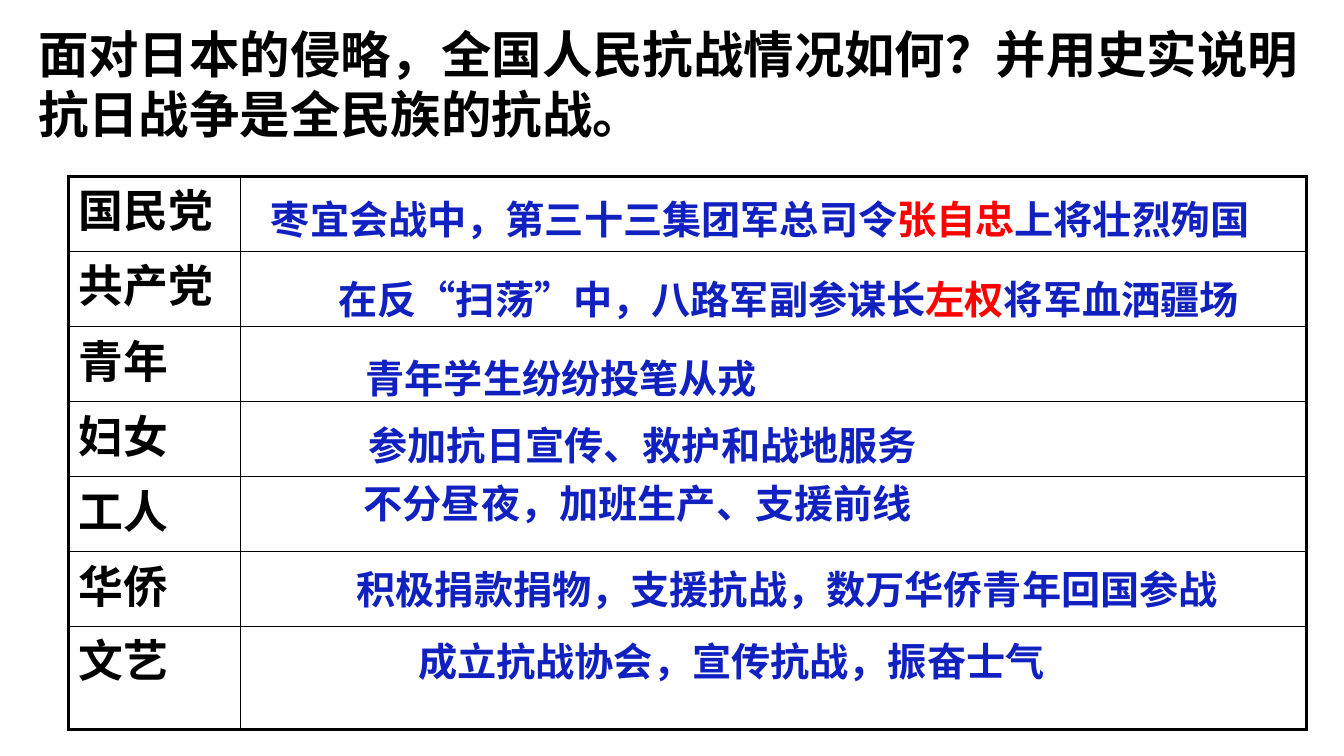
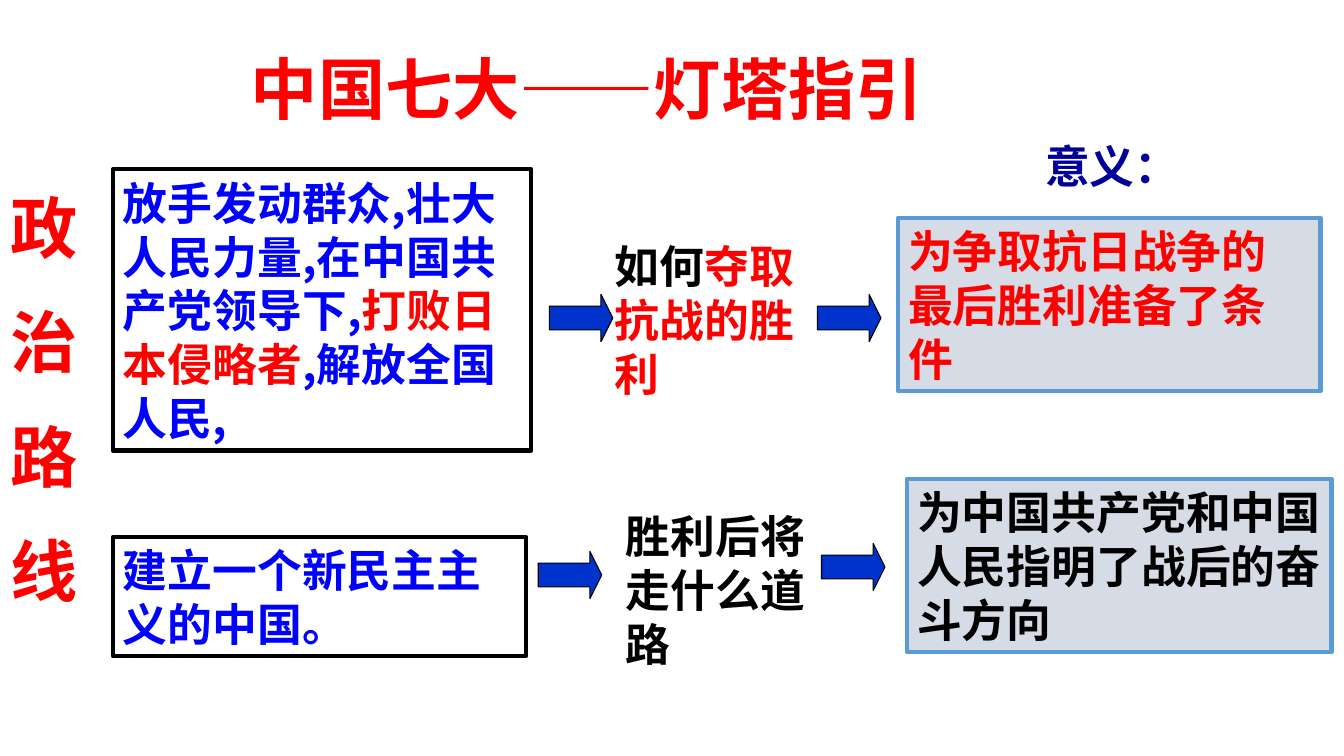
import pptx
import pptx.dml.color
import pptx.enum.shapes
import pptx.enum.text
import pptx.oxml
import pptx.oxml.ns
import pptx.util

CELL = 0.1
COLUMNS, ROWS = 133.33, 75
FONT = "Noto Sans CJK SC"
BLACK, RED, BLUE, NAVY = "000000", "FF0000", "0000FF", "000099"
FACT_BLUE, ARROW_BLUE = "1121BF", "0033CC"
PANEL_FILL, PANEL_LINE = "D6DCE5", "5B9BD5"
THICK, THIN = 2.25, 1
TOP = pptx.enum.text.MSO_ANCHOR.TOP
MIDDLE = pptx.enum.text.MSO_ANCHOR.MIDDLE
SHAPES = pptx.enum.shapes.MSO_SHAPE


def grid(*cells):
    return [pptx.util.Inches(cell * CELL) for cell in cells]


def color(hex_text):
    return pptx.dml.color.RGBColor.from_string(hex_text)


def style_run(run, size, ink, font):
    run.font.size = pptx.util.Pt(size)
    run.font.bold = True
    run.font.color.rgb = color(ink)
    run.font.name = font
    east_asian = pptx.oxml.parse_xml(
        f'<a:ea {pptx.oxml.ns.nsdecls("a")} typeface="{FONT}"/>')
    run.font._element.append(east_asian)


def write(frame, paragraphs, size, font=FONT, spacing=1.2, gap=0,
          align=pptx.enum.text.PP_ALIGN.LEFT):
    for index, parts in enumerate(paragraphs):
        paragraph = frame.paragraphs[0] if index == 0 else frame.add_paragraph()
        paragraph.alignment = align
        paragraph.line_spacing = pptx.util.Pt(size * spacing)
        if index:
            paragraph.space_before = pptx.util.Pt(gap)
        for words, ink in parts:
            run = paragraph.add_run()
            run.text = words
            style_run(run, size, ink, font)


def add_label(slide, place, paragraphs, size, anchor=TOP, **options):
    frame = slide.shapes.add_textbox(*grid(*place)).text_frame
    frame.word_wrap = True
    frame.vertical_anchor = anchor
    write(frame, paragraphs, size, **options)


def add_panel(slide, place, parts, outline, fill=None):
    panel = slide.shapes.add_shape(SHAPES.RECTANGLE, *grid(*place))
    panel.shadow.inherit = False
    panel.line.color.rgb = color(outline)
    panel.line.width = pptx.util.Pt(3)
    if fill:
        panel.fill.solid()
        panel.fill.fore_color.rgb = color(fill)
    else:
        panel.fill.background()
    panel.text_frame.word_wrap = True
    panel.text_frame.vertical_anchor = MIDDLE
    write(panel.text_frame, [parts], 32)


def add_arrow(slide, left, top):
    arrow = slide.shapes.add_shape(SHAPES.RIGHT_ARROW, *grid(left, top, 6.3, 4.7))
    arrow.shadow.inherit = False
    arrow.adjustments[0] = 0.5
    arrow.adjustments[1] = 0.25
    arrow.fill.solid()
    arrow.fill.fore_color.rgb = color(ARROW_BLUE)
    arrow.line.color.rgb = color(BLACK)
    arrow.line.width = pptx.util.Pt(0.75)


def set_borders(cell, **widths):
    properties = cell._tc.get_or_add_tcPr()
    for side in "LRTB":
        properties.append(pptx.oxml.parse_xml(
            f'<a:ln{side} {pptx.oxml.ns.nsdecls("a")} w="{pptx.util.Pt(widths[side])}">'
            f'<a:solidFill><a:srgbClr val="{BLACK}"/></a:solidFill></a:ln{side}>'))


def add_groups_table(slide, left, top, widths, heights, groups):
    table = slide.shapes.add_table(
        len(heights), len(widths),
        *grid(left, top, sum(widths), sum(heights))).table
    table.first_row = table.horz_banding = False
    for column, width in zip(table.columns, grid(*widths)):
        column.width = width
    for row, height in zip(table.rows, grid(*heights)):
        row.height = height
    last_row, last_column = len(heights) - 1, len(widths) - 1
    for r, group in enumerate(groups):
        for c in range(len(widths)):
            cell = table.cell(r, c)
            set_borders(cell,
                        L=THICK if c == 0 else THIN,
                        R=THICK if c == last_column else THIN,
                        T=THICK if r == 0 else THIN,
                        B=THICK if r == last_row else THIN)
            cell.fill.background()
        name_cell = table.cell(r, 0)
        name_cell.vertical_anchor = TOP if r == last_row else MIDDLE
        if r == last_row:
            name_cell.margin_top = pptx.util.Inches(0.1)
        write(name_cell.text_frame, [[(group, BLACK)]], 32)


def build_resistance(slide):
    left, widths = 6.8, (17.1, 105.7)
    groups = ["国民党", "共产党", "青年", "妇女", "工人", "华侨", "文艺"]
    add_groups_table(slide, left, 17.5, widths, [7.45] * 6 + [10.2], groups)
    facts = [
        (25.9, 18.9, [("枣宜会战中，第三十三集团军总司令", FACT_BLUE),
                      ("张自忠", RED), ("上将壮烈殉国", FACT_BLUE)]),
        (32.6, 26.8, [("在反“扫荡”中，八路军副参谋长", FACT_BLUE),
                      ("左权", RED), ("将军血洒疆场", FACT_BLUE)]),
        (35.3, 34.6, [("青年学生纷纷投笔从戎", FACT_BLUE)]),
        (35.6, 41.3, [("参加抗日宣传、救护和战地服务", FACT_BLUE)]),
        (35.1, 47, [("不分昼夜，加班生产、支援前线", FACT_BLUE)]),
        (34.4, 55.6, [("积极捐款捐物，支援抗战，数万华侨青年回国参战", FACT_BLUE)]),
        (40.5, 62.7, [("成立抗战协会，宣传抗战，振奋士气", FACT_BLUE)]),
    ]
    table_right = left + sum(widths)
    for fact_left, top, parts in facts:
        add_label(slide, (fact_left, top, table_right - fact_left, 5.7),
                  [parts], 28, MIDDLE)
    question = "面对日本的侵略，全国人民抗战情况如何？并用史实说明抗日战争是全民族的抗战。"
    add_label(slide, (2.8, 1.8, 130.9, 13.1), [[(question, BLACK)]], 36)


def build_congress(slide):
    add_label(slide, (23.9, 0.2, 90.1, 13.1),
              [[("中国七大——灯塔指引", RED)]], 48, spacing=1.8)
    add_label(slide, (0.1, 18, 10, 45.4),
              [[(word, RED)] for word in "政治路线"], 48, gap=24)
    add_label(slide, (98.8, 13.3, 23.1, 6.4), [[("意义：", NAVY)]], 32,
              align=pptx.enum.text.PP_ALIGN.CENTER)

    add_panel(slide, (11.2, 16.8, 41.5, 27.9),
              [("放手发动群众,壮大人民力量,在中国共产党领导下,", BLUE),
               ("打败日本侵略者", RED), (",解放全国人民,", BLUE)], BLACK)
    add_panel(slide, (11.2, 53.3, 41, 11.8),
              [("建立一个新民主主义的中国。", BLUE)], BLACK)

    add_label(slide, (60, 23.1, 23.3, 17.2),
              [[("如何", BLACK), ("夺取抗战的胜利", RED)]], 32, MIDDLE)
    add_label(slide, (61.1, 50, 23.3, 17.2),
              [[("胜利后将走什么道路", BLACK)]], 32, font="Calibri")

    add_panel(slide, (89.1, 21.6, 41.9, 17.2),
              [("为争取抗日战争的最后胜利准备了条件", RED)], PANEL_LINE, PANEL_FILL)
    add_panel(slide, (90, 47.5, 42.1, 17.2),
              [("为中国共产党和中国人民指明了战后的奋斗方向", BLACK)],
              PANEL_LINE, PANEL_FILL)

    for left, top in [(54.5, 29.2), (53.4, 54.7), (81.1, 29.2), (81.5, 53.9)]:
        add_arrow(slide, left, top)


def main():
    deck = pptx.Presentation()
    deck.slide_width, deck.slide_height = grid(COLUMNS, ROWS)
    for build in (build_resistance, build_congress):
        build(deck.slides.add_slide(deck.slide_layouts[6]))
    deck.save("out.pptx")


if __name__ == "__main__":
    main()
